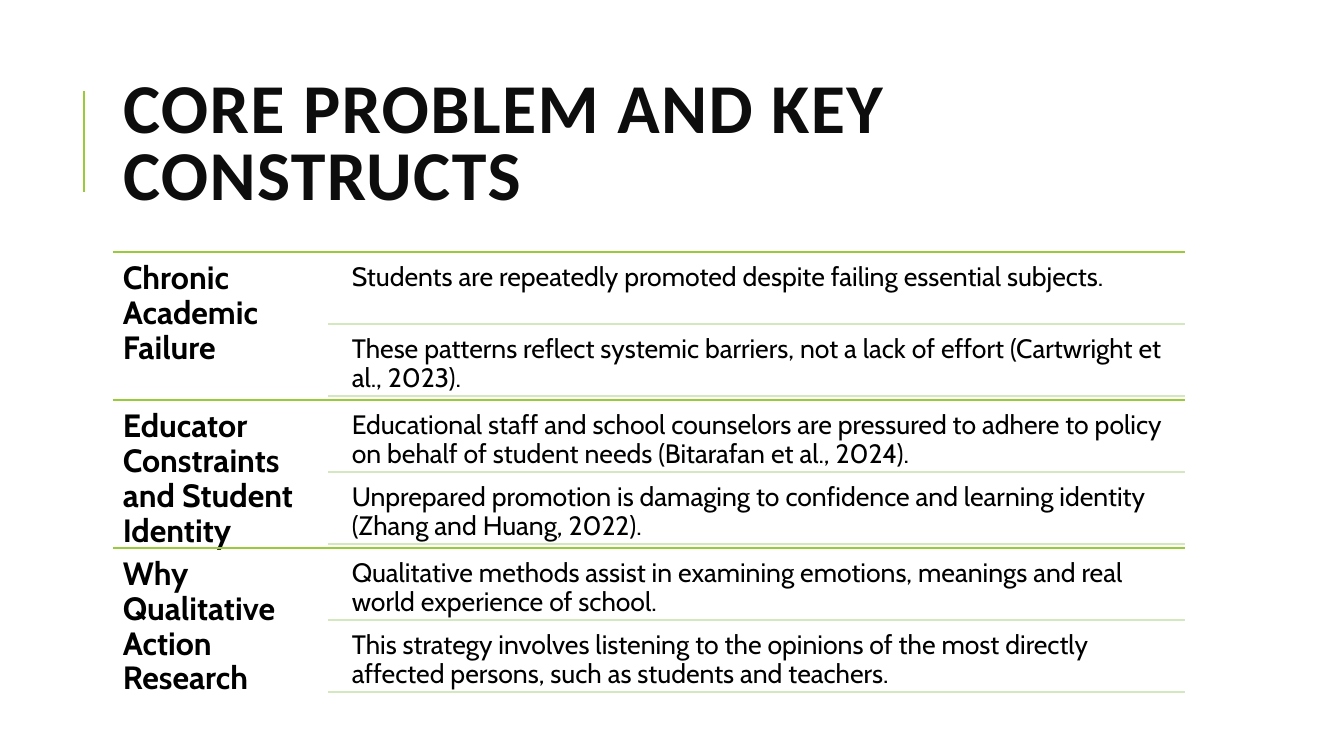
from dataclasses import dataclass

from lxml.etree import SubElement
from pptx import Presentation
from pptx.dml.color import RGBColor
from pptx.enum.shapes import MSO_CONNECTOR as Link
from pptx.enum.text import MSO_ANCHOR as Anchor, MSO_AUTO_SIZE as Fit, PP_ALIGN as Align
from pptx.oxml.ns import qn
from pptx.slide import Slide
from pptx.text.text import TextFrame
from pptx.util import Inches, Pt

COLORS = {"green": "99CB38", "pale": "D4E7BF", "title": "0D0D0D", "text": "000000"}
LEFT, RIGHT, TOP = 1.12, 11.75, 2.5
BAND, STEP, GAP = 1.467, 0.715, 0.035
RULE, NOTE = 3.25, 3.41


@dataclass
class Style:
    font: str
    size: int
    color: str
    bold: bool
    inset: float
    space: float


@dataclass
class Topic:
    name: str
    notes: tuple[str, ...]


TITLE = Style("Calibri", 50, "title", True, 0.1, 0.8)
HEAD = Style("Cabin", 23, "text", True, 0.1, 0.9)
BODY = Style("Cabin", 19, "text", False, 0.08, 0.9)

TOPICS = [
    Topic("Chronic Academic Failure", (
        "Students are repeatedly promoted despite failing essential subjects.",
        "These patterns reflect systemic barriers, not a lack of effort (Cartwright et al., 2023).",
    )),
    Topic("Educator Constraints and Student Identity", (
        "Educational staff and school counselors are pressured to adhere to policy "
        "on behalf of student needs (Bitarafan et al., 2024).",
        "Unprepared promotion is damaging to confidence and learning identity (Zhang and Huang, 2022).",
    )),
    Topic("Why Qualitative Action Research", (
        "Qualitative methods assist in examining emotions, meanings and real world experience of school.",
        "This strategy involves listening to the opinions of the most directly affected persons, "
        "such as students and teachers.",
    )),
]


def write(frame: TextFrame, text: str, style: Style, anchor: Anchor) -> None:
    frame.text = text
    frame.word_wrap = True
    frame.auto_size = Fit.NONE
    frame.vertical_anchor = anchor
    frame.margin_left = frame.margin_right = Inches(style.inset)
    frame.margin_top = frame.margin_bottom = Inches(style.inset)
    para = frame.paragraphs[0]
    para.alignment = Align.LEFT
    para.line_spacing = style.space
    font = para.runs[0].font
    font.name, font.size, font.bold = style.font, Pt(style.size), style.bold
    font.color.rgb = RGBColor.from_string(COLORS[style.color])


def add_text(slide: Slide, x: float, y: float, w: float, h: float, text: str, style: Style) -> None:
    box = slide.shapes.add_textbox(Inches(x), Inches(y), Inches(w), Inches(h))
    write(box.text_frame, text, style, Anchor.TOP)


def add_line(slide: Slide, x1: float, y1: float, x2: float, y2: float, color: str, width: float) -> None:
    line = slide.shapes.add_connector(Link.STRAIGHT, Inches(x1), Inches(y1), Inches(x2), Inches(y2))
    line.line.color.rgb = RGBColor.from_string(COLORS[color])
    line.line.width = Pt(width)
    SubElement(line._element.spPr, qn("a:effectLst"))


def add_title(slide: Slide, text: str) -> None:
    title = slide.shapes.title
    title.left, title.top = Inches(LEFT), Inches(0.64)
    title.width, title.height = Inches(RIGHT - LEFT), Inches(1.64)
    write(title.text_frame, text, TITLE, Anchor.MIDDLE)
    run = title.text_frame.paragraphs[0].runs[0]
    run.font._element.set("spc", "100")


def add_topic(slide: Slide, topic: Topic, top: float) -> None:
    add_line(slide, LEFT, top, RIGHT, top, "green", 1.25)
    add_text(slide, LEFT, top, RULE - LEFT, BAND, topic.name, HEAD)
    for row, note in enumerate(topic.notes):
        y = top + GAP + row * STEP
        base = y + STEP - GAP
        add_text(slide, NOTE, y, RIGHT - NOTE, STEP - GAP, note, BODY)
        add_line(slide, RULE, base, RIGHT, base, "pale", 1.25)


def main() -> None:
    deck = Presentation()
    deck.slide_width, deck.slide_height = Inches(13.33), Inches(7.5)
    slide = deck.slides.add_slide(deck.slide_layouts[5])
    add_line(slide, 0.83, 1.9, 0.83, 0.9, "green", 1.5)
    add_title(slide, "CORE PROBLEM AND KEY CONSTRUCTS")
    for row, topic in enumerate(TOPICS):
        add_topic(slide, topic, TOP + row * BAND)
    deck.save("out.pptx")


if __name__ == "__main__":
    main()
